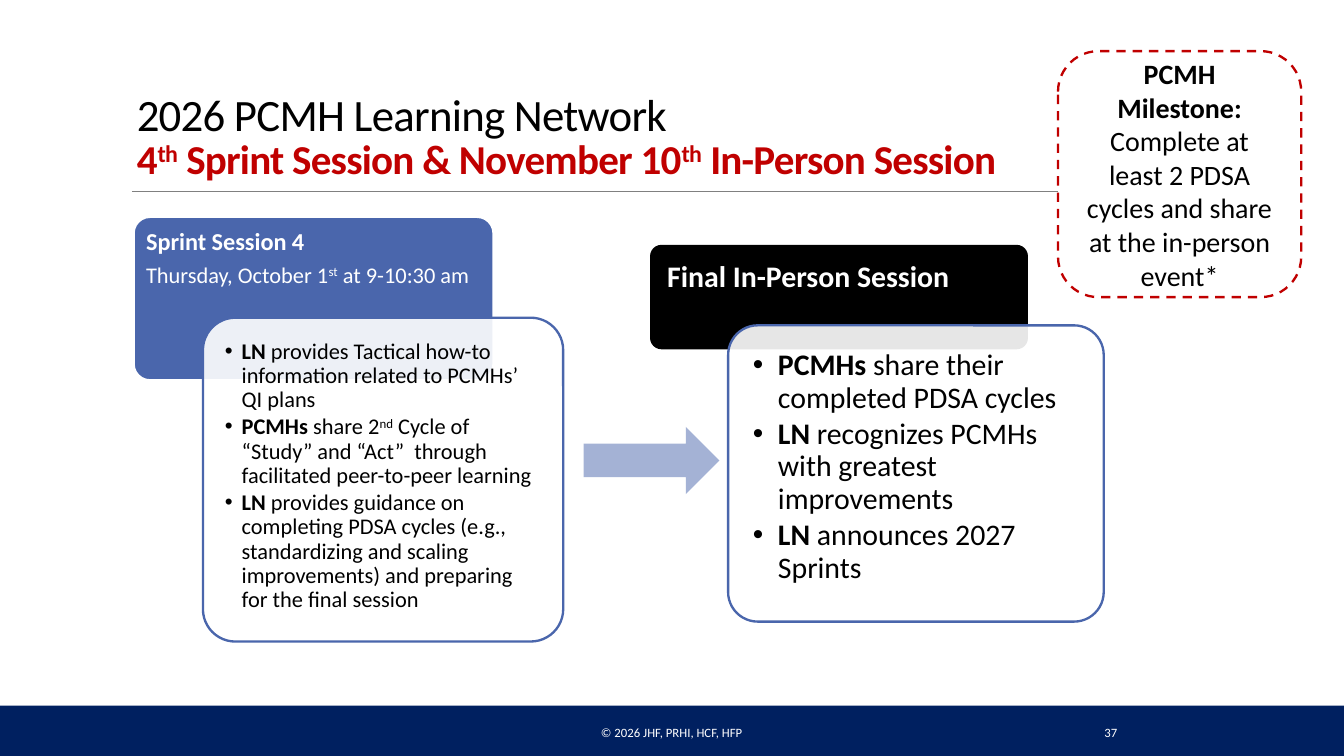
"""Build the learning network slide on the fourth sprint and final sessions."""
from dataclasses import dataclass

import lxml.etree
import pptx
import pptx.dml.color
import pptx.enum.dml
import pptx.enum.shapes
import pptx.enum.text
import pptx.oxml.ns
import pptx.util

Pt = pptx.util.Pt
SHAPES = pptx.enum.shapes.MSO_SHAPE
ANCHOR = pptx.enum.text.MSO_ANCHOR
ALIGN = pptx.enum.text.PP_ALIGN
DEFAULT_INSETS = (7.2, 3.6, 7.2, 3.6)


@dataclass(frozen=True)
class Theme:
    font: str = "Calibri"
    black: str = "000000"
    white: str = "FFFFFF"
    navy: str = "002060"
    blue: str = "4A66AC"
    red: str = "C00000"
    gray: str = "808080"
    title: float = 24
    subtitle: float = 22
    final: float = 16
    milestone: float = 15
    sprint: float = 13
    detail: float = 12
    footer: float = 6.8
    outline: float = 1.25


def add_child(parent, tag, **attributes):
    child = lxml.etree.SubElement(parent, pptx.oxml.ns.qn(tag))
    for name, value in attributes.items():
        child.set(name, str(value))
    return child


def write(paragraph, text, *, font, size, color, bold=False, spacing=0):
    """Add runs to a paragraph; | toggles bold and ^ toggles superscript."""
    for bold_index, part in enumerate(text.split("|")):
        for raised_index, piece in enumerate(part.split("^")):
            if not piece:
                continue
            run = paragraph.add_run()
            run.text = piece
            run.font.name = font
            run.font.size = Pt(size)
            run.font.bold = bold or bold_index % 2 == 1
            run.font.color.rgb = pptx.dml.color.RGBColor.from_string(color)
            properties = run.font._element
            if raised_index % 2:
                properties.set("baseline", "30000")
            if spacing:
                properties.set("spc", str(round(spacing * 100)))


class SlideBuilder:
    def __init__(self, slide, theme):
        self.slide = slide
        self.theme = theme

    def shape(self, kind, box, fill, line=None, opacity=100, dashed=False, corner=None):
        shape = self.slide.shapes.add_shape(kind, *map(Pt, box))
        shape.shadow.inherit = False
        shape.fill.solid()
        shape.fill.fore_color.rgb = pptx.dml.color.RGBColor.from_string(fill)
        if opacity < 100:
            color = shape.fill._xPr.find(".//" + pptx.oxml.ns.qn("a:srgbClr"))
            add_child(color, "a:alpha", val=opacity * 1000)
        if line:
            shape.line.color.rgb = pptx.dml.color.RGBColor.from_string(line)
            shape.line.width = Pt(self.theme.outline)
        else:
            shape.line.fill.background()
        if dashed:
            shape.line.dash_style = pptx.enum.dml.MSO_LINE.DASH
        if corner is not None:
            shape.adjustments[0] = corner
        return shape

    def rule(self, left, right, top):
        line = self.slide.shapes.add_connector(
            pptx.enum.shapes.MSO_CONNECTOR.STRAIGHT, Pt(left), Pt(top), Pt(right), Pt(top))
        line.line.color.rgb = pptx.dml.color.RGBColor.from_string(self.theme.gray)
        line.line.width = Pt(0.5)
        add_child(line._element.spPr, "a:effectLst")

    def text_box(self, box):
        return self.slide.shapes.add_textbox(*map(Pt, box))

    def frame(self, shape, anchor, insets=DEFAULT_INSETS):
        frame = shape.text_frame
        frame.word_wrap = True
        frame.vertical_anchor = anchor
        (frame.margin_left, frame.margin_top,
         frame.margin_right, frame.margin_bottom) = map(Pt, insets)
        return frame

    def paragraphs(self, frame, items, align=ALIGN.LEFT, line_spacing=1, after=0, indent=0):
        """Write (text, size, color) items, with gaps after as a share of the size."""
        for index, (text, size, color) in enumerate(items):
            paragraph = frame.add_paragraph() if index else frame.paragraphs[0]
            paragraph.alignment = align
            paragraph.line_spacing = line_spacing
            paragraph.space_after = Pt(size * after)
            if indent:
                properties = paragraph._p.get_or_add_pPr()
                properties.set("marL", str(Pt(indent)))
                properties.set("indent", str(-Pt(indent)))
                add_child(properties, "a:buFont", typeface="Arial")
                add_child(properties, "a:buChar", char="•")
            write(paragraph, text, font=self.theme.font, size=size, color=color)

    def title(self, box, first, second):
        theme = self.theme
        frame = self.frame(self.text_box(box), ANCHOR.BOTTOM)
        paragraph = frame.paragraphs[0]
        paragraph.line_spacing = 0.85
        write(paragraph, first, font=theme.font, size=theme.title,
              color=theme.black, spacing=-0.4)
        paragraph.add_line_break()
        write(paragraph, second, font=theme.font, size=theme.subtitle,
              color=theme.red, bold=True, spacing=-0.4)

    def footer(self, box, text, align):
        frame = self.frame(self.text_box(box), ANCHOR.MIDDLE)
        self.paragraphs(frame, [(text, self.theme.footer, self.theme.white)], align)

    def session(self, header, header_color, header_line, heading, heading_height,
                body, bullets, size, inset, indent):
        theme = self.theme
        self.shape(SHAPES.ROUNDED_RECTANGLE, header, header_color, header_line, corner=0.1)
        left, top, width, _ = header
        frame = self.frame(self.text_box((left, top, width, heading_height)),
                           ANCHOR.TOP, (inset, inset, inset, inset / 2))
        self.paragraphs(frame, [(text, points, theme.white) for text, points in heading],
                        line_spacing=0.9, after=0.35)
        card = self.shape(SHAPES.ROUNDED_RECTANGLE, body, theme.white, theme.blue,
                          opacity=90, corner=0.1)
        frame = self.frame(card, ANCHOR.TOP, (inset,) * 4)
        self.paragraphs(frame, [(text, size, theme.black) for text in bullets],
                        line_spacing=0.9, after=0.15, indent=indent)

    def milestone(self, box, text):
        theme = self.theme
        shape = self.shape(SHAPES.ROUNDED_RECTANGLE, box, theme.white, theme.red, dashed=True)
        self.paragraphs(self.frame(shape, ANCHOR.MIDDLE),
                        [(text, theme.milestone, theme.black)], ALIGN.CENTER)


def main():
    theme = Theme()
    presentation = pptx.Presentation()
    presentation.slide_width, presentation.slide_height = Pt(720), Pt(405)
    slide = presentation.slides.add_slide(presentation.slide_layouts[6])
    builder = SlideBuilder(slide, theme)

    builder.shape(SHAPES.RECTANGLE, (0, 378, 720, 27), theme.navy)
    builder.rule(70.7, 659, 102.6)
    builder.title((66.2, 15.8, 603, 85.7), "2026 PCMH Learning Network",
                  "4^th^ Sprint Session & November 10^th^\u00a0In-Person Session")
    builder.footer((584.6, 381.6, 78, 21.6), "37", ALIGN.LEFT)
    builder.footer((217.4, 381.6, 285, 21.6), "© 2026\u00a0JHF, PRHI, HCF, HFP", ALIGN.CENTER)

    builder.session(
        header=(71.6, 116.2, 192.8, 87.6), header_color=theme.blue, header_line=theme.white,
        heading=[("|Sprint Session 4|", theme.sprint),
                 ("Thursday, October 1^st^ at 9-10:30 am", theme.detail)],
        heading_height=58.3, body=(108.7, 170.2, 193, 173.5),
        bullets=["|LN| provides Tactical how-to information related to PCMHs’ QI plans",
                 "|PCMHs |share 2^nd^ Cycle of  “Study” and “Act”  through "
                 "facilitated peer-to-peer learning",
                 "|LN| provides guidance on completing PDSA cycles (e.g., standardizing "
                 "and scaling improvements) and preparing for the final session"],
        size=theme.detail, inset=6.7, indent=9)
    builder.shape(SHAPES.RIGHT_ARROW, (312.7, 228.7, 72.7, 36), theme.blue, opacity=50)
    builder.session(
        header=(348.9, 131.8, 201.2, 54.7), header_color=theme.black, header_line=theme.black,
        heading=[("|Final In-Person Session|", theme.final)],
        heading_height=36, body=(390.1, 174.3, 201.2, 158.7),
        bullets=["|PCMHs |share their completed PDSA cycles",
                 "|LN| recognizes PCMHs with greatest improvements",
                 "|LN| announces 2027 Sprints"],
        size=theme.final, inset=8.6, indent=13.5)
    builder.milestone((566.8, 27.4, 130.3, 131.8),
                      "|PCMH Milestone: |Complete at least 2 PDSA cycles "
                      "and share at the in-person event*")
    presentation.save("out.pptx")


if __name__ == "__main__":
    main()
